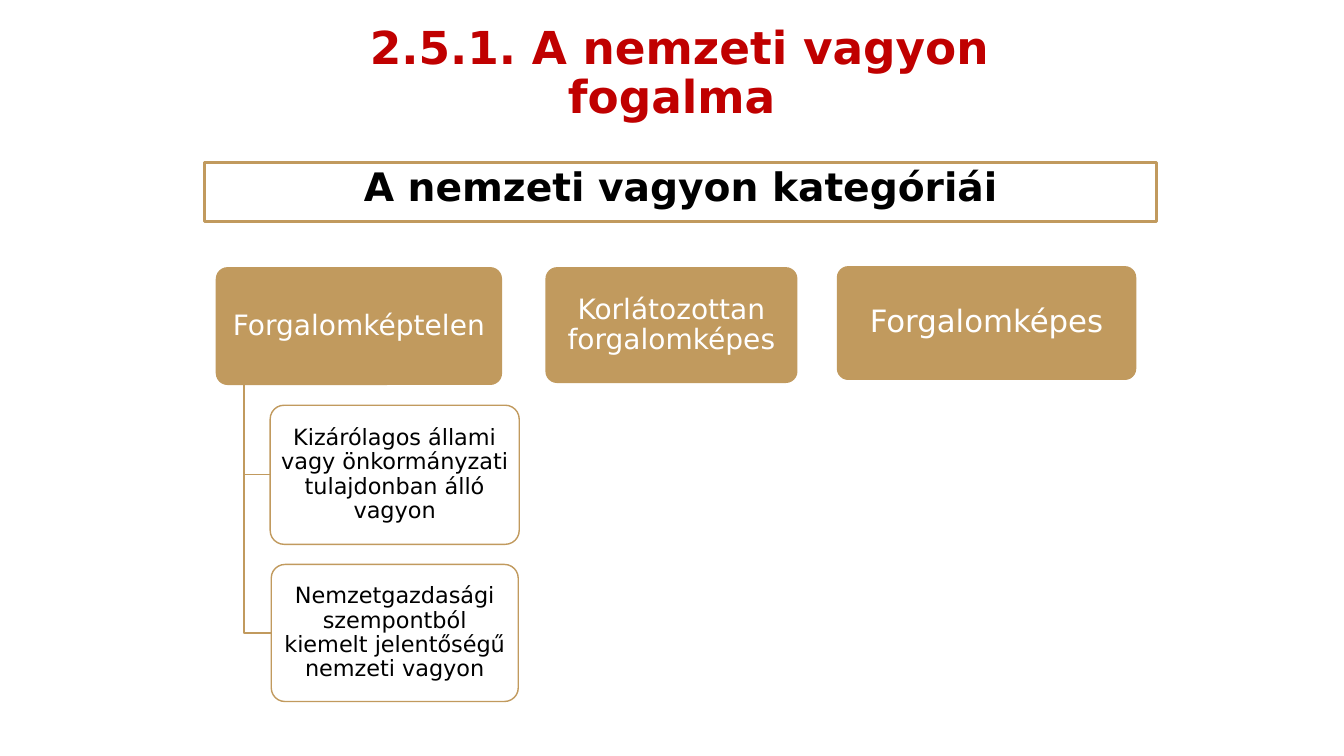
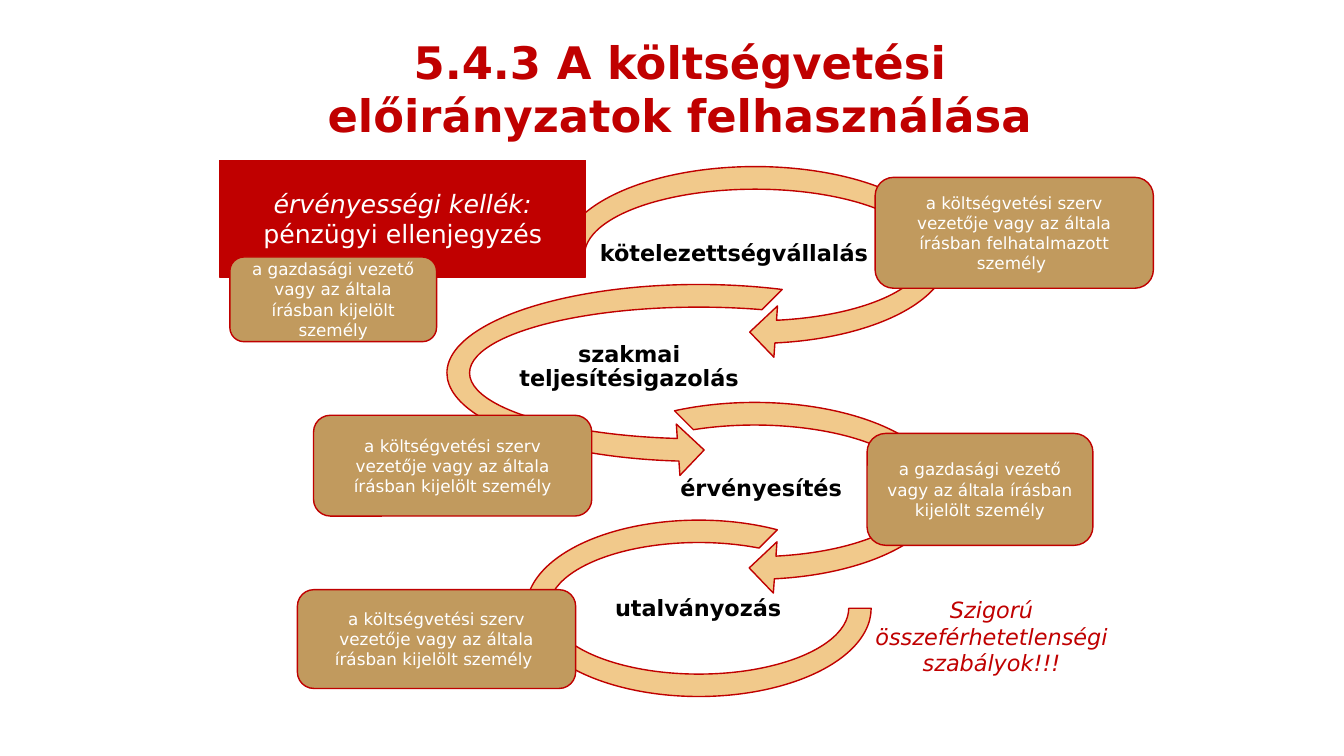
from pptx import Presentation
from pptx.dml.color import RGBColor
from pptx.enum.shapes import MSO_SHAPE as SHAPE
from pptx.enum.text import MSO_ANCHOR as ANCHOR, PP_ALIGN as ALIGN
from pptx.util import Inches, Pt

FONT = "DejaVu Sans"
RED = RGBColor(0xC0, 0x00, 0x00)
GOLD = RGBColor(0xC1, 0x9A, 0x5E)
SAND = RGBColor(0xF1, 0xC9, 0x8B)
WHITE = RGBColor(0xFF, 0xFF, 0xFF)
BLACK = RGBColor(0x00, 0x00, 0x00)

CATEGORIES = [
    ("Forgalomképtelen", (2.14, 2.65, 2.84, 1.17), 20),
    ("Korlátozottan forgalomképes", (5.41, 2.65, 2.5, 1.15), 20),
    ("Forgalomképes", (8.3, 2.64, 2.97, 1.13), 22),
]
SUBCATEGORIES = [
    ("Kizárólagos állami vagy önkormányzati tulajdonban álló vagyon", (2.68, 4.02, 2.47, 1.38)),
    ("Nemzetgazdasági szempontból kiemelt jelentőségű nemzeti vagyon", (2.69, 5.6, 2.45, 1.36)),
]
TRUNK_X, TRUNK_TOP = 2.42, 3.82

STEPS = [
    ("kötelezettségvállalás", (5.91, 2.24, 2.74, 0.57),
     SHAPE.CIRCULAR_ARROW, (5.43, 1.51, 4.12, 2.04), (0.11, 11.42, 45, 108, 0.125)),
    ("szakmai teljesítésigazolás", (5.08, 3.36, 2.32, 0.57),
     SHAPE.LEFT_CIRCULAR_ARROW, (4.29, 2.68, 5.28, 2.04), (0.11, 11.42, 63, 189, 0.125)),
    ("érvényesítés", (6.57, 4.57, 1.96, 0.57),
     SHAPE.CIRCULAR_ARROW, (5.47, 3.85, 4.03, 2.04), (0.11, 11.42, 45, 135, 0.125)),
    ("utalványozás", (6.01, 5.76, 1.83, 0.57),
     SHAPE.BLOCK_ARC, (5.22, 5.16, 3.42, 1.75), (0, 189, 0.127)),
]
HEAD = "a költségvetési szerv vezetője vagy az általa írásban "
FINANCE = "a gazdasági vezető vagy az általa írásban kijelölt személy"
REQUIREMENT = [("érvényességi kellék: ", True), ("pénzügyi ellenjegyzés", False)]
ACTORS = [
    (HEAD + "felhatalmazott személy ", (8.68, 1.76, 2.76, 1.1)),
    (HEAD + "kijelölt személy", (3.11, 4.12, 2.76, 1)),
    (FINANCE, (2.28, 2.55, 2.05, 0.84)),
    (FINANCE, (8.6, 4.3, 2.24, 1.11)),
    (HEAD + "kijelölt személy ", (2.95, 5.85, 2.76, 0.98)),
]


def write(shape, runs, size, color, bold=False, spacing=1.0, inset=(0.1, 0.05), anchor=ANCHOR.MIDDLE):
    """Fill a shape with one centred paragraph of (text, italic) runs."""
    tf = shape.text_frame
    tf.word_wrap = True
    tf.vertical_anchor = anchor
    tf.margin_left = tf.margin_right = Inches(inset[0])
    tf.margin_top = tf.margin_bottom = Inches(inset[1])
    p = tf.paragraphs[0]
    p.alignment = ALIGN.CENTER
    p.line_spacing = spacing
    for text, italic in [(runs, False)] if isinstance(runs, str) else runs:
        r = p.add_run()
        r.text = text
        r.font.name, r.font.size = FONT, Pt(size)
        r.font.bold, r.font.italic = bold, italic
        r.font.color.rgb = color


def paint(shape, fill, line, width=1):
    """Set fill and outline, where None means no fill or no line."""
    shape.shadow.inherit = False
    if fill is None:
        shape.fill.background()
    else:
        shape.fill.solid()
        shape.fill.fore_color.rgb = fill
    if line is None:
        shape.line.fill.background()
    else:
        shape.line.color.rgb = line
        shape.line.width = Pt(width)


def add_box(s, kind, box, fill, line, width=1, adjustments=()):
    """Add a painted preset shape."""
    sp = s.shapes.add_shape(kind, *map(Inches, box))
    for i, value in enumerate(adjustments):
        sp.adjustments[i] = value
    paint(sp, fill, line, width)
    return sp


def add_text(s, box, runs, size, color, **style):
    """Add a text box."""
    write(s.shapes.add_textbox(*map(Inches, box)), runs, size, color, **style)


def add_title(s, box, text, size, **style):
    """Add the red bold slide title."""
    add_text(s, box, text, size, RED, bold=True, **style)


def add_elbow(s, box):
    """Draw the line from the trunk down and across to a box's left side."""
    left, top, _, height = box
    middle = top + height / 2
    path = s.shapes.build_freeform(Inches(TRUNK_X), Inches(TRUNK_TOP))
    path.add_line_segments(
        [(Inches(TRUNK_X), Inches(middle)), (Inches(left), Inches(middle))], close=False)
    paint(path.convert_to_shape(), None, GOLD)


def build_categories(s):
    """Build the slide on the categories of national assets."""
    add_title(s, (2.69, 0.17, 8.1, 1.14), "2.5.1. A nemzeti vagyon fogalma ", 32.4, spacing=0.9)
    sp = add_box(s, SHAPE.RECTANGLE, (2.03, 1.61, 9.44, 0.59), None, GOLD, 2)
    write(sp, "A nemzeti vagyon kategóriái", 28, BLACK, bold=True, spacing=0.9, anchor=ANCHOR.TOP)
    for text, box, size in CATEGORIES:
        sp = add_box(s, SHAPE.ROUNDED_RECTANGLE, box, GOLD, None, adjustments=[0.1])
        write(sp, text, size, WHITE, spacing=0.9, inset=(0.04, 0.03))
    for text, box in SUBCATEGORIES:
        add_elbow(s, box)
        sp = add_box(s, SHAPE.ROUNDED_RECTANGLE, box, None, GOLD, adjustments=[0.1])
        write(sp, text, 16, BLACK, spacing=0.9, inset=(0.03, 0.02))


def build_process(s):
    """Build the slide on the use of budget appropriations."""
    add_title(s, (2.35, 0.29, 8.79, 1.18), "5.4.3 A költségvetési előirányzatok felhasználása", 32,
              anchor=ANCHOR.TOP)
    for label, label_box, kind, box, adjustments in STEPS:
        add_box(s, kind, box, SAND, RED, adjustments=adjustments)
        add_text(s, label_box, label, 16, BLACK, bold=True, spacing=0.9, inset=(0.01, 0.01))
    sp = add_box(s, SHAPE.RECTANGLE, (2.18, 1.59, 3.63, 1.16), RED, RED)
    write(sp, REQUIREMENT, 18, WHITE)
    for text, box in ACTORS:
        write(add_box(s, SHAPE.ROUNDED_RECTANGLE, box, GOLD, RED), text, 12, WHITE)
    add_text(s, (8.53, 5.82, 2.61, 0.98), [("Szigorú összeférhetetlenségi szabályok!!!", True)], 16, RED)


def main():
    """Build and save the presentation."""
    prs = Presentation()
    prs.slide_width, prs.slide_height = Inches(13.33), Inches(7.5)
    for build in (build_categories, build_process):
        build(prs.slides.add_slide(prs.slide_layouts[6]))
    prs.save("out.pptx")


if __name__ == "__main__":
    main()
